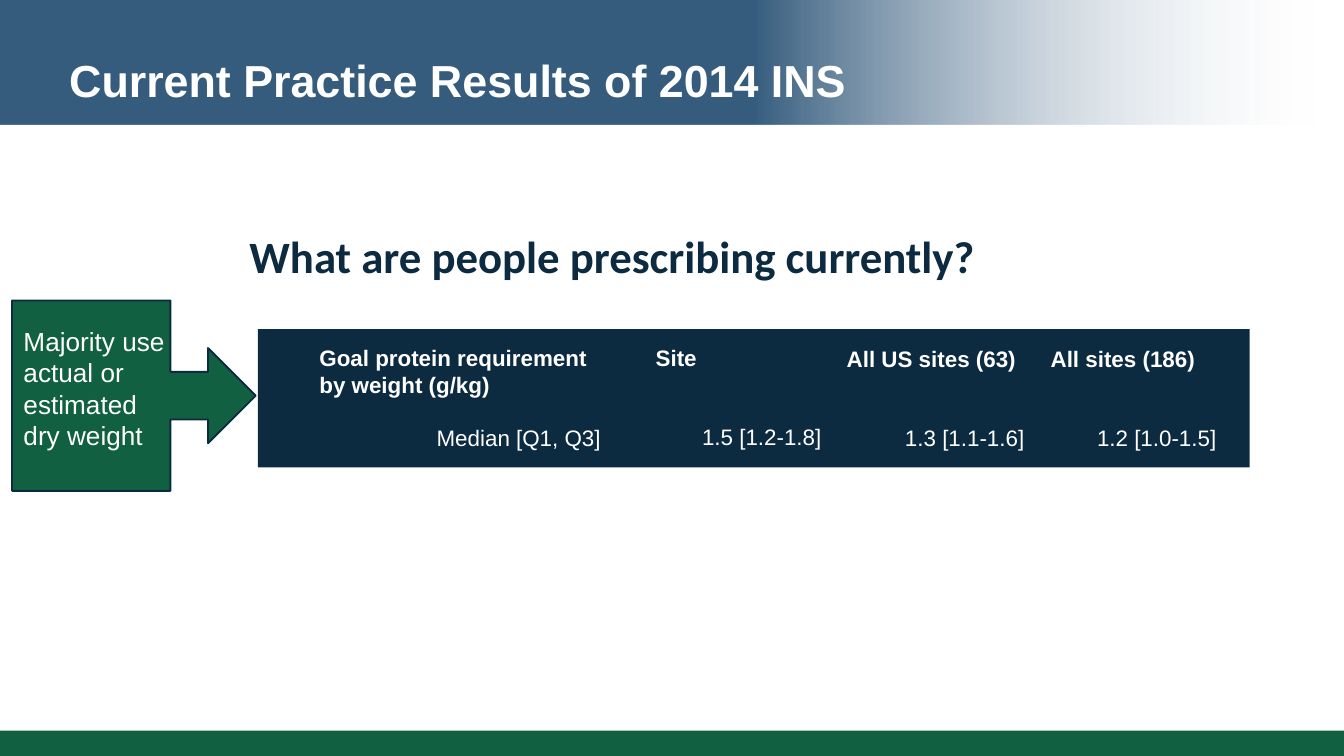
import pptx
import pptx.dml.color
import pptx.enum.shapes
import pptx.enum.text
import pptx.oxml
import pptx.oxml.ns
import pptx.util
import lxml.etree

Pt = pptx.util.Pt
SHAPES = pptx.enum.shapes.MSO_SHAPE
ALIGN = pptx.enum.text.PP_ALIGN
ANCHOR = pptx.enum.text.MSO_ANCHOR

COLORS = {"navy": "0C2A40", "blue": "113F66", "green": "106041", "white": "FFFFFF"}
FORMATS = {
    "title": {"name": "Arial", "size": Pt(24), "bold": True},
    "question": {"name": "Calibri", "size": Pt(24), "bold": True},
    "note": {"name": "Arial", "size": Pt(14), "bold": False},
    "header": {"name": "Arial", "size": Pt(12), "bold": True},
    "value": {"name": "Arial", "size": Pt(12), "bold": False},
}
TEXT_SHADOW = (
    '<a:effectLst xmlns:a="http://schemas.openxmlformats.org/drawingml/2006/main">'
    '<a:outerShdw blurRad="38100" dist="38100" dir="2700000" algn="tl">'
    '<a:srgbClr val="000000"><a:alpha val="60000"/></a:srgbClr>'
    "</a:outerShdw></a:effectLst>"
)


def rgb(color):
    return pptx.dml.color.RGBColor.from_string(COLORS[color])


class SlideBuilder:
    def __init__(self, slide):
        self.slide = slide

    def shape(self, kind, box, fill, line=None):
        shape = self.slide.shapes.add_shape(kind, *map(Pt, box))
        shape.shadow.inherit = False
        shape.fill.solid()
        shape.fill.fore_color.rgb = rgb(fill)
        if line:
            shape.line.color.rgb = rgb(line)
            shape.line.width = Pt(1)
        else:
            shape.line.fill.background()
        return shape

    def gradient_band(self, box, stops):
        """Each stop is (position, color, opacity in percent)."""
        shape = self.shape(SHAPES.RECTANGLE, box, stops[0][1])
        shape.fill.gradient()
        shape.fill.gradient_angle = 0
        for stop, (position, color, opacity) in zip(shape.fill.gradient_stops, stops):
            stop.position = position
            stop.color.rgb = rgb(color)
        tag = pptx.oxml.ns.qn("a:srgbClr")
        for element, stop in zip(shape.element.spPr.iter(tag), stops):
            alpha = lxml.etree.SubElement(element, pptx.oxml.ns.qn("a:alpha"))
            alpha.set("val", str(stop[2] * 1000))

    def text(self, box, lines, color="white", anchor=ANCHOR.TOP):
        """Each line is (text, format name, alignment, space before)."""
        frame = self.slide.shapes.add_textbox(*map(Pt, box)).text_frame
        frame.word_wrap = True
        frame.vertical_anchor = anchor
        for index, (text, style, alignment, gap) in enumerate(lines):
            paragraph = frame.add_paragraph() if index else frame.paragraphs[0]
            paragraph.alignment = alignment
            if index:
                paragraph.space_before = Pt(gap)
            run = paragraph.add_run()
            run.text = text
            for key, value in FORMATS[style].items():
                setattr(run.font, key, value)
            run.font.color.rgb = rgb(color)
        return frame

    def title(self, box, text):
        frame = self.text(box, [(text, "title", ALIGN.LEFT, 0)], anchor=ANCHOR.MIDDLE)
        fill = next(frame.paragraphs[0].runs[0].font.fill._xPr.iter(pptx.oxml.ns.qn("a:solidFill")))
        fill.addnext(pptx.oxml.parse_xml(TEXT_SHADOW))


def main():
    presentation = pptx.Presentation()
    presentation.slide_width, presentation.slide_height = Pt(720), Pt(405)
    builder = SlideBuilder(presentation.slides.add_slide(presentation.slide_layouts[6]))

    # Header band, footer band and title
    builder.gradient_band((0, 0, 720, 66.5), [(0.56, "blue", 84), (1, "white", 0)])
    builder.shape(SHAPES.RECTANGLE, (0, 391.5, 720, 13.5), "green")
    builder.title((30, 8.5, 560, 68), "Current Practice Results of 2014 INS")

    # Arrow callout and question
    builder.shape(SHAPES.RIGHT_ARROW_CALLOUT, (6.5, 161, 130.5, 102), "green", "navy")
    note = "Majority use actual or estimated dry weight"
    builder.text((5.5, 170.8, 97.2, 75), [(note, "note", ALIGN.LEFT, 0)])
    question = "What are people prescribing currently?"
    builder.text((126.5, 119, 466.5, 36), [(question, "question", ALIGN.LEFT, 0)], "navy")

    # Results panel: left, top, width, header, value, gap between them
    builder.shape(SHAPES.RECTANGLE, (138.2, 176.3, 531.3, 74.2), "navy")
    columns = [
        (164, 180.7, 165, "Goal protein requirement by weight (g/kg)", "Median [Q1, Q3]", 14),
        (344.2, 180.7, 103, "Site", "1.5 [1.2-1.8]", 28),
        (446.5, 181.5, 109.4, "All US sites (63)", "1.3 [1.1-1.6]", 28),
        (555.8, 181.5, 103, "All sites (186)", "1.2 [1.0-1.5]", 28),
    ]
    for left, top, width, header, value, gap in columns:
        lines = [(header, "header", ALIGN.LEFT, 0), (value, "value", ALIGN.RIGHT, gap)]
        builder.text((left, top, width, 65.5), lines)

    presentation.save("out.pptx")


if __name__ == "__main__":
    main()
